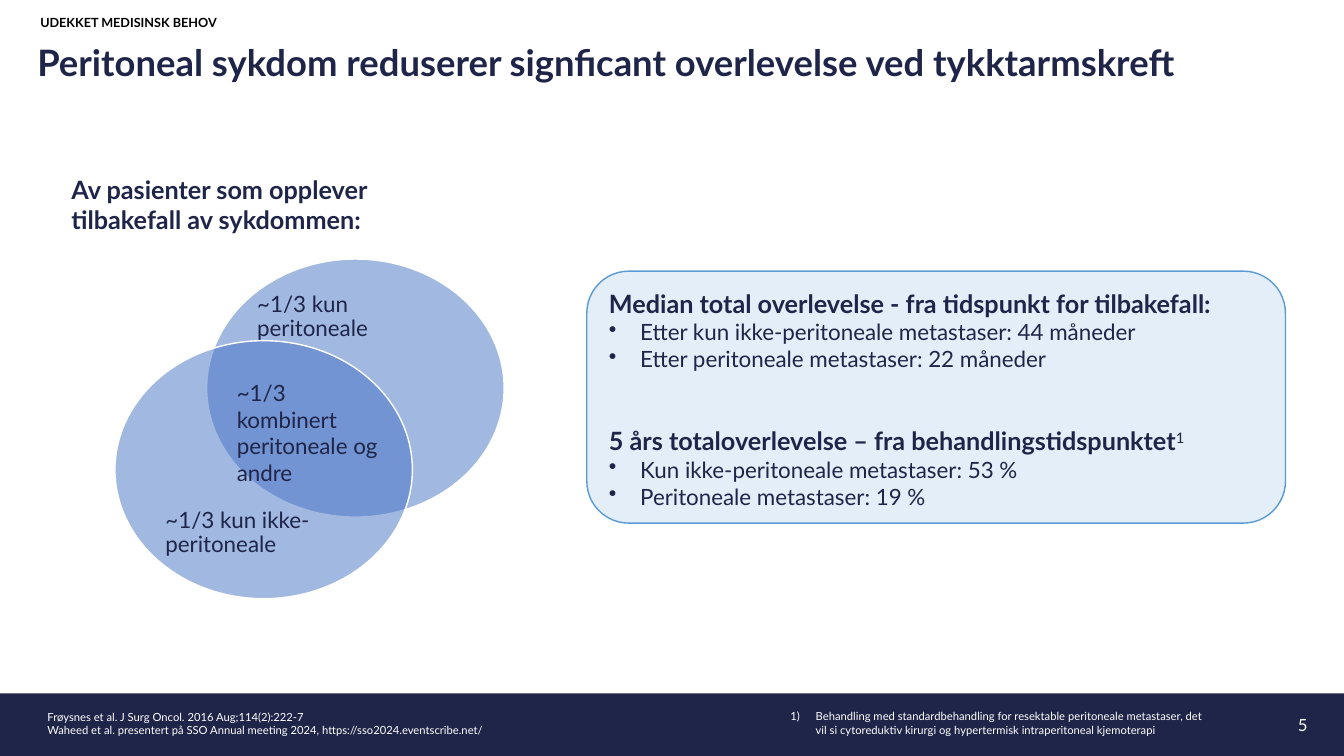
import pptx
import pptx.util
import pptx.dml.color
import pptx.enum.shapes
import pptx.enum.text
import pptx.oxml.ns
import lxml.etree

Inches, Pt = pptx.util.Inches, pptx.util.Pt
SHAPE = pptx.enum.shapes.MSO_SHAPE
ANCHOR = pptx.enum.text.MSO_ANCHOR
ALIGN = pptx.enum.text.PP_ALIGN
qn = pptx.oxml.ns.qn

COLORS = {"navy": "1F2548", "white": "FFFFFF", "black": "000000",
          "panel": "9DC3E6", "panel_line": "5B9BD5", "circle": "4472C4"}
INSETS = (0.1, 0.05, 0.1, 0.05)


def rgb(name):
    """Return the named colour."""
    return pptx.dml.color.RGBColor.from_string(COLORS[name])


def add_shape(slide, kind, box, fill, opacity=100, line=None):
    """Add a filled preset shape, optionally outlined and see-through."""
    sp = slide.shapes.add_shape(kind, *map(Inches, box))
    sp.shadow.inherit = False
    sp.fill.solid()
    sp.fill.fore_color.rgb = rgb(fill)
    if opacity < 100:
        clr = sp.fill._xPr.find(".//" + qn("a:srgbClr"))
        lxml.etree.SubElement(clr, qn("a:alpha"), val=str(opacity * 1000))
    if line:
        sp.line.color.rgb = rgb(line)
        sp.line.width = Pt(1)
    else:
        sp.line.fill.background()
    return sp


def set_frame(sp, insets=INSETS, anchor=ANCHOR.TOP, wrap=True):
    """Set margins, anchor and wrapping, and return the text frame."""
    tf = sp.text_frame
    tf.margin_left, tf.margin_top, tf.margin_right, tf.margin_bottom = map(Inches, insets)
    tf.vertical_anchor = anchor
    tf.word_wrap = wrap
    return tf


def add_paragraph(tf, text, size, color="navy", bold=False, align=ALIGN.LEFT, spacing=1.0):
    """Fill the first empty paragraph or append one."""
    p = tf.paragraphs[0] if not tf.paragraphs[0].runs else tf.add_paragraph()
    p.add_run().text = text
    p.alignment = align
    p.line_spacing = spacing
    p.font.name = "Lato"
    p.font.size = Pt(size)
    p.font.bold = bold
    p.font.color.rgb = rgb(color)
    return p


def set_list(p, indent, tag, **attrs):
    """Give a paragraph a hanging indent and a list marker."""
    pPr = p._p.get_or_add_pPr()
    pPr.set("marL", str(Inches(indent)))
    pPr.set("indent", str(-Inches(indent)))
    marker = lxml.etree.Element(qn(tag), **attrs)
    pPr.find(qn("a:defRPr")).addprevious(marker)


def add_text(slide, box, lines, size, color="navy", bold=False, align=ALIGN.LEFT,
             spacing=1.0, **frame):
    """Add a text box with one paragraph per line."""
    tf = set_frame(slide.shapes.add_textbox(*map(Inches, box)), **frame)
    for line in lines:
        add_paragraph(tf, line, size, color, bold, align, spacing)
    return tf


def add_header(slide, x, y, w):
    """Place the section label and the title."""
    add_text(slide, (x, y, w, 0.29), ["UDEKKET MEDISINSK BEHOV"], 9, "black", True,
             spacing=0.9, insets=(0, 0, 0, 0), wrap=False)
    add_text(slide, (x - 0.03, y + 0.24, w + 0.7, 0.81),
             ["Peritoneal sykdom reduserer signficant overlevelse ved tykktarmskreft"],
             26, bold=True, spacing=0.9, insets=(0, 0.05, 0.1, 0.05))


def add_venn(slide, x, y):
    """Place the heading and the two overlapping circles with their labels."""
    add_text(slide, (x, y, 3.64, 0.71),
             ["Av pasienter som opplever tilbakefall av sykdommen:"], 18, bold=True)
    circles = [(1.44, 0.89, 0.27, "~1/3 kun peritoneale"),
               (0.53, 1.7, 1.6, "~1/3 kun ikke-peritoneale")]
    for dx, dy, label_dy, label in circles:
        add_shape(slide, SHAPE.OVAL, (x + dx, y + dy, 2.95, 2.56), "circle", 50, "white")
        add_text(slide, (x + dx + 0.43, y + dy + label_dy, 2.09, 0.62), [label], 16,
                 spacing=0.9, insets=(0.07,) * 4)
    add_text(slide, (x + 1.64, y + 2.03, 1.68, 1.17),
             ["~1/3 kombinert peritoneale og andre"], 16)


def add_panel(slide, box):
    """Place the rounded panel with the survival figures."""
    sp = add_shape(slide, SHAPE.ROUNDED_RECTANGLE, box, "panel", 28, "panel_line")
    tf = set_frame(sp)
    groups = [("Median total overlevelse - fra tidspunkt for tilbakefall:", "",
               ["Etter kun ikke-peritoneale metastaser: 44 måneder",
                "Etter peritoneale metastaser: 22 måneder"]),
              ("5 års totaloverlevelse – fra behandlingstidspunktet", "1",
               ["Kun ikke-peritoneale metastaser: 53 %",
                "Peritoneale metastaser: 19 %"])]
    for i, (heading, note, items) in enumerate(groups):
        p = add_paragraph(tf, heading, 18, bold=True)
        if i:
            p.space_before = Pt(38)
        if note:
            r = p.add_run()
            r.text = note
            r.font.bold = False
            r.font._element.set("baseline", "30000")
        for item in items:
            set_list(add_paragraph(tf, item, 16), 0.31, "a:buChar", char="•")


def add_footer(slide, y, w, h):
    """Place the footer band with sources, note and slide number."""
    add_shape(slide, SHAPE.RECTANGLE, (0, y, w, h), "navy")
    plain = {"insets": (0, 0, 0, 0), "anchor": ANCHOR.MIDDLE}
    add_text(slide, (0.47, y + 0.04, 4.79, 0.51),
             ["Frøysnes et al. J Surg Oncol. 2016 Aug;114(2):222-7",
              "Waheed et al. presentert på SSO Annual meeting 2024, "
              "https://sso2024.eventscribe.net/"], 8, "white", wrap=False, **plain)
    tf = add_text(slide, (7.84, y + 0.16, 4.19, 0.27),
                  ["Behandling med standardbehandling for resektable peritoneale metastaser, "
                   "det vil si cytoreduktiv kirurgi og hypertermisk intraperitoneal kjemoterapi"],
                  8, "white", **plain)
    set_list(tf.paragraphs[0], 0.25, "a:buAutoNum", type="arabicParenR")
    add_text(slide, (12.47, y + 0.11, 0.5, 0.4), ["5"], 12, "white", align=ALIGN.RIGHT,
             insets=(0.1, 0.05, 0, 0.05), anchor=ANCHOR.MIDDLE)


def main():
    """Build the slide and save it."""
    prs = pptx.Presentation()
    prs.slide_width, prs.slide_height = Inches(13.33), Inches(7.5)
    slide = prs.slides.add_slide(prs.slide_layouts[6])
    add_footer(slide, 6.88, 13.33, 0.62)
    add_header(slide, 0.4, 0.16, 10.87)
    add_venn(slide, 0.61, 1.68)
    add_panel(slide, (5.82, 2.69, 6.93, 2.5))
    prs.save("out.pptx")


if __name__ == "__main__":
    main()
